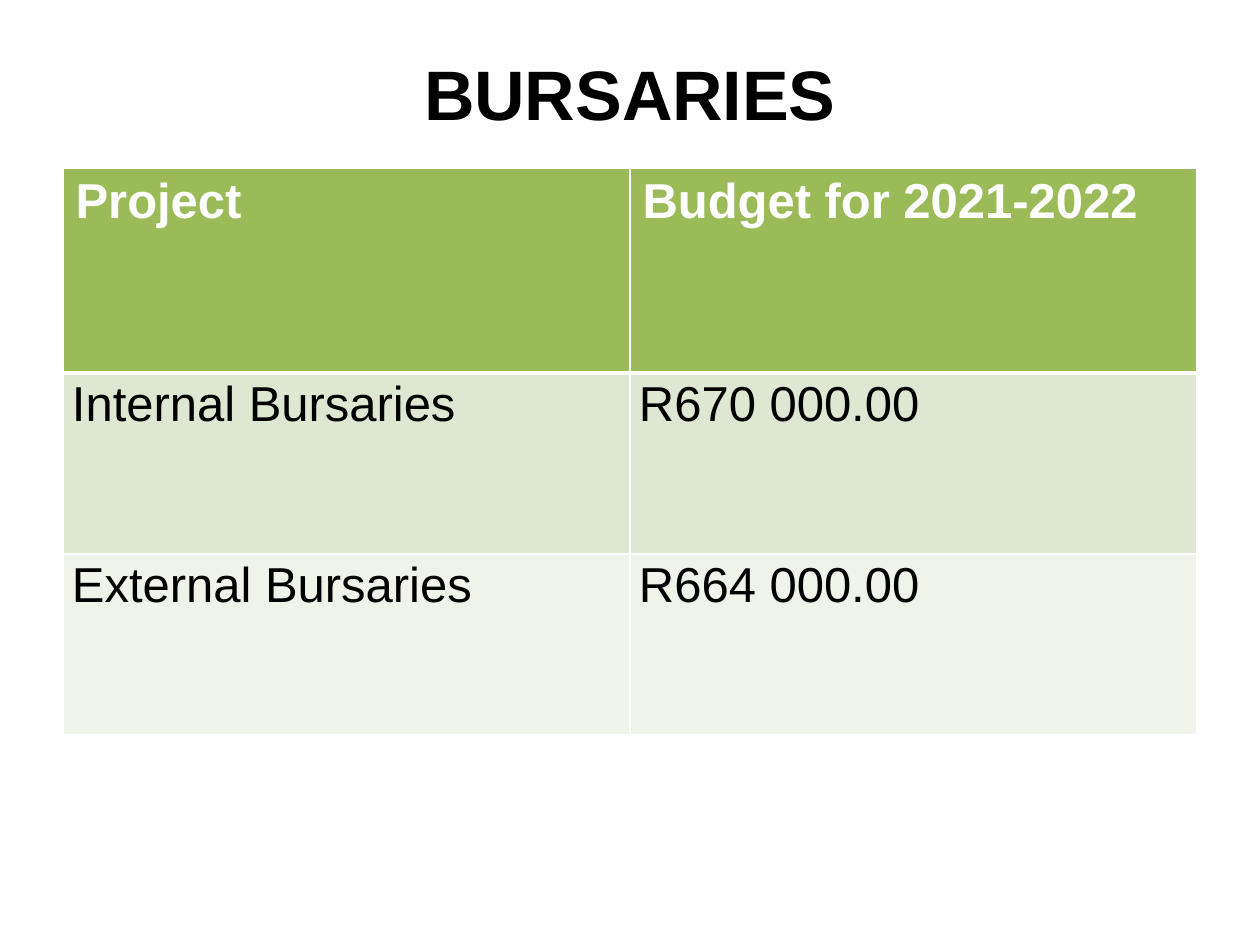
from dataclasses import dataclass

from lxml.etree import SubElement
from pptx import Presentation
from pptx.dml.color import RGBColor as RGB
from pptx.enum.text import MSO_ANCHOR as ANCHOR, PP_ALIGN as ALIGN
from pptx.oxml.ns import qn
from pptx.util import Pt

PX = 914400 / 126
WIDTH, HEIGHT = 1260, 945


def px(n):
    return round(n * PX)


@dataclass(frozen=True)
class Theme:
    font: str = "Arial"
    title_size: int = 40
    table_size: int = 28
    black: str = "000000"
    white: str = "FFFFFF"
    header: str = "9BBB59"
    bands: tuple = ("DEE7D1", "EFF3EA")
    body_spacing: float = 1.07


class Deck:
    """Holds the theme and the current slide."""

    def __init__(self, theme):
        self.theme = theme
        self.prs = Presentation()
        self.prs.slide_width, self.prs.slide_height = px(WIDTH), px(HEIGHT)
        self.s = self.prs.slides.add_slide(self.prs.slide_layouts[5])

    def style(self, p, size, color, bold):
        f = p.font
        f.name, f.size, f.bold = self.theme.font, Pt(size), bold
        f.color.rgb = RGB.from_string(color)

    def title(self, text, x, y, w, h):
        sp = self.s.shapes.title
        sp.left, sp.top, sp.width, sp.height = map(px, (x, y, w, h))
        tf = sp.text_frame
        tf.text, tf.vertical_anchor = text, ANCHOR.MIDDLE
        p = tf.paragraphs[0]
        p.alignment = ALIGN.CENTER
        self.style(p, self.theme.title_size, self.theme.black, True)

    def borders(self, cell, **widths):
        """Draw white cell edges, given as side=points."""
        tc_pr = cell._tc.get_or_add_tcPr()
        for side, width in widths.items():
            ln = SubElement(tc_pr, qn(f"a:ln{side}"), w=str(Pt(width)))
            fill = SubElement(ln, qn("a:solidFill"))
            SubElement(fill, qn("a:srgbClr"), val=self.theme.white)

    def cell(self, cell, text, row):
        t, is_header = self.theme, row == 0
        self.borders(cell, L=1, R=1, T=3 if row == 1 else 1, B=3 if is_header else 1)
        cell.fill.solid()
        fill = t.header if is_header else t.bands[(row - 1) % len(t.bands)]
        cell.fill.fore_color.rgb = RGB.from_string(fill)
        cell.text = text
        p = cell.text_frame.paragraphs[0]
        if not is_header:
            cell.margin_left = cell.margin_right = px(9)
            cell.margin_top = cell.margin_bottom = 0
            p.line_spacing = t.body_spacing
        self.style(p, t.table_size, t.white if is_header else t.black, is_header)

    def table(self, rows, x, y, w, heights):
        frame = self.s.shapes.add_table(
            len(rows), len(rows[0]), px(x), px(y), px(w), px(sum(heights)))
        table = frame.table
        for r, (texts, height) in enumerate(zip(rows, heights)):
            table.rows[r].height = px(height)
            for c, text in enumerate(texts):
                self.cell(table.cell(r, c), text, r)


def main():
    margin = 63
    content = WIDTH - 2 * margin
    deck = Deck(Theme())
    deck.title("BURSARIES", margin, 38, content, 110)
    deck.table(
        [
            ("Project", "Budget for 2021-2022"),
            ("Internal Bursaries", "R670 000.00"),
            ("External Bursaries", "R664 000.00"),
        ],
        margin, 168, content, (205, 181, 181))
    deck.prs.save("out.pptx")


if __name__ == "__main__":
    main()
